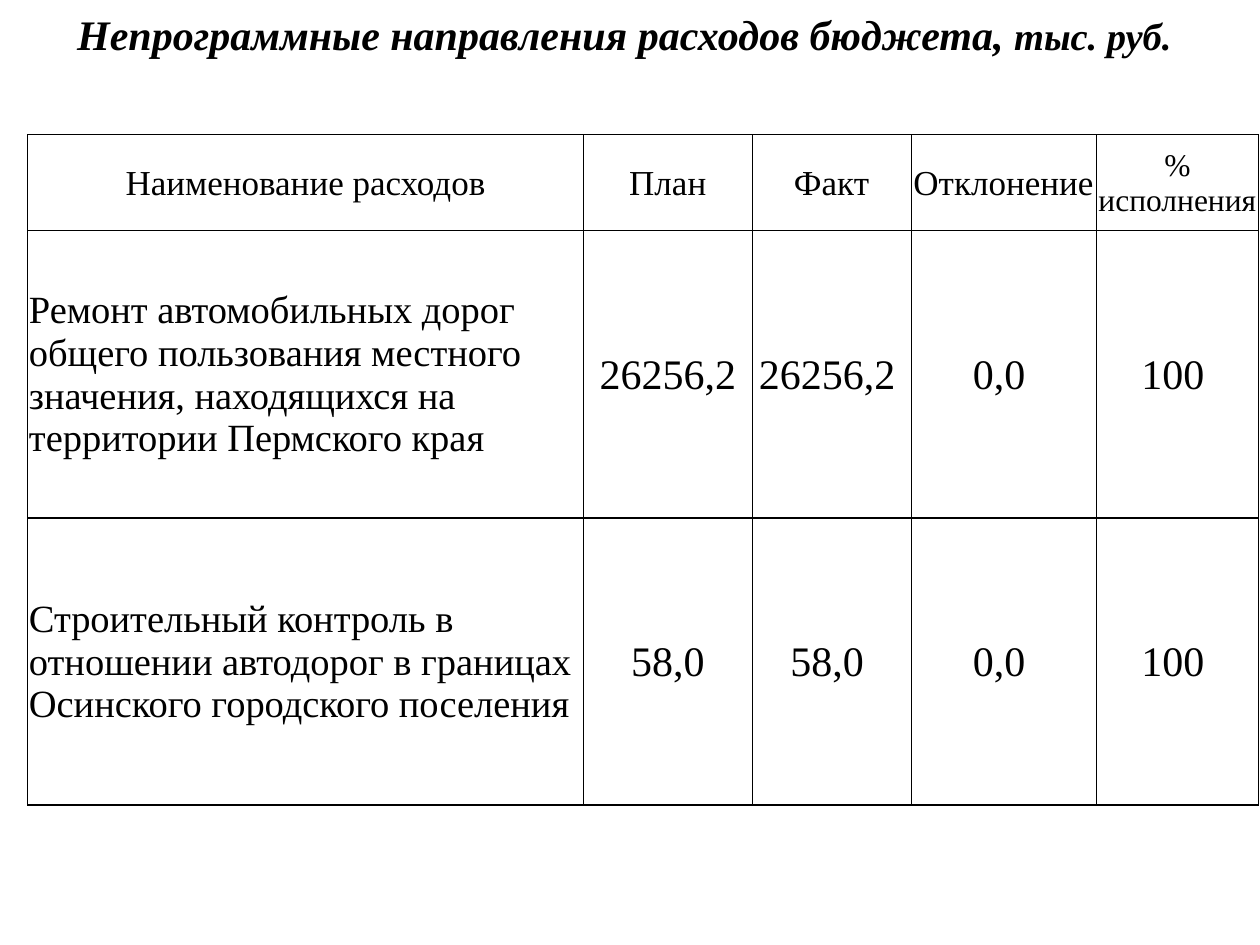
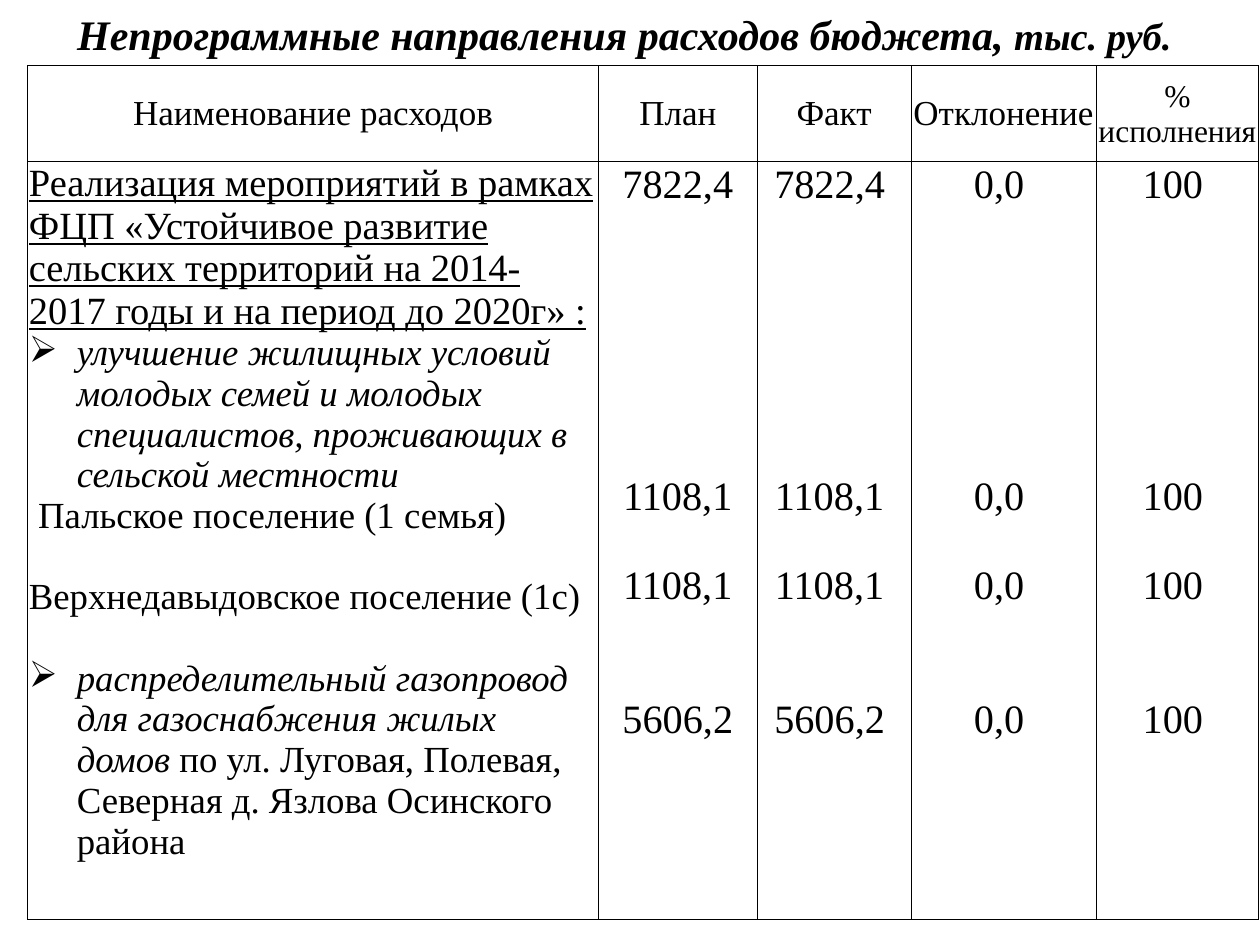
from dataclasses import dataclass

from lxml.etree import SubElement
from pptx import Presentation
from pptx.dml.color import RGBColor
from pptx.enum.text import MSO_ANCHOR, MSO_AUTO_SIZE, PP_ALIGN
from pptx.oxml.ns import qn
from pptx.util import Inches, Pt

# Shared style
COLORS = {"text": "000000", "border": "000000", "background": "FFFFFF"}
FONT = "Times New Roman"
LINE_HEIGHT = 1.107  # line height of the font relative to its size
THIN, THICK = 0.5, 1
HEADINGS = ["Наименование расходов", "План", "Факт", "Отклонение", "% исполнения"]
TABLE_LEFT = 0.22
HEADING_HEIGHT = 0.76


@dataclass
class Line:
    """One paragraph: runs are (text, style letters), gap counts skipped lines."""
    runs: list
    size: float
    centered: bool = True
    gap: int = 0
    bullet: str = ""


def write_lines(frame, lines):
    for index, line in enumerate(lines):
        paragraph = frame.paragraphs[0] if index == 0 else frame.add_paragraph()
        paragraph.alignment = PP_ALIGN.CENTER if line.centered else PP_ALIGN.LEFT
        paragraph.space_before = Pt(round(line.gap * line.size * LINE_HEIGHT, 1))
        if line.bullet:
            add_bullet(paragraph, line.bullet)
        for text, style in line.runs:
            run = paragraph.add_run()
            run.text = text
            font = run.font
            font.name, font.size = FONT, Pt(line.size)
            font.color.rgb = RGBColor.from_string(COLORS["text"])
            font.bold, font.italic = "b" in style, "i" in style
            font.underline = "u" in style


def add_bullet(paragraph, symbol):
    properties = paragraph._p.get_or_add_pPr()
    properties.set("marL", str(Inches(0.38)))
    properties.set("indent", str(-Inches(0.38)))
    SubElement(properties, qn("a:buChar"), char=symbol)


def set_borders(cell, left, right, top, bottom):
    properties = cell._tc.get_or_add_tcPr()
    for side, width in zip("LRTB", (left, right, top, bottom)):
        border = SubElement(properties, qn(f"a:ln{side}"), w=str(Pt(width)))
        fill = SubElement(border, qn("a:solidFill"))
        SubElement(fill, qn("a:srgbClr"), val=COLORS["border"])


def add_title(slide):
    title = slide.shapes.add_textbox(Inches(0.35), Inches(0.02), Inches(9.21), Inches(0.51))
    frame = title.text_frame
    frame.word_wrap = True
    frame.auto_size = MSO_AUTO_SIZE.SHAPE_TO_FIT_TEXT
    write_lines(frame, [Line([("Непрограммные направления расходов бюджета, ", "bi"),
                              ("тыс. руб.", "bi")], 24)])
    frame.paragraphs[0].runs[-1].font.size = Pt(22)


def add_expense_table(slide, top, widths, row_height, expenses, anchor, rule):
    """Each expense is a list with the lines of its five cells."""
    last = len(HEADINGS) - 1
    headings = [[Line([(text, "")], 18 if column == last else 20)]
                for column, text in enumerate(HEADINGS)]
    rows = [headings] + expenses
    heights = [HEADING_HEIGHT] + [row_height] * len(expenses)
    table = slide.shapes.add_table(
        len(rows), len(widths), Inches(TABLE_LEFT), Inches(top),
        Inches(sum(widths)), Inches(sum(heights))).table
    table.first_row = table.horz_banding = False
    for column, width in zip(table.columns, widths):
        column.width = Inches(width)
    for row, height in zip(table.rows, heights):
        row.height = Inches(height)

    for r, contents in enumerate(rows):
        for c, lines in enumerate(contents):
            cell = table.cell(r, c)
            set_borders(cell, THIN, THICK if c == last else THIN,
                        rule if r > 1 else THIN, rule if r else THIN)
            cell.fill.background()
            cell.margin_left = cell.margin_top = Inches(0.01)
            cell.margin_right = Inches(0.08 if r and c > 1 else 0.01)
            cell.margin_bottom = 0
            cell.vertical_anchor = anchor if r else MSO_ANCHOR.MIDDLE
            write_lines(cell.text_frame, lines)


def build_roads_slide(slide):
    expenses = [
        ("Ремонт автомобильных дорог общего пользования местного значения, "
         "находящихся на территории Пермского края", "26256,2"),
        ("Строительный контроль в отношении автодорог в границах "
         "Осинского городского поселения", "58,0"),
    ]
    rows = [[[Line([(name, "")], 22, centered=False)]]
            + [[Line([(value, "")], 24)] for value in (amount, amount, "0,0", "100")]
            for name, amount in expenses]
    add_title(slide)
    add_expense_table(slide, 1.07, [4.41, 1.34, 1.26, 1.47, 1.29], 2.28, rows,
                      MSO_ANCHOR.MIDDLE, THICK)


def build_rural_slide(slide):
    program = [
        Line([("Реализация мероприятий в рамках ФЦП «Устойчивое развитие сельских "
               "территорий на 2014-2017 годы и на период до 2020г» :", "u")],
             22, centered=False),
        Line([("улучшение жилищных условий молодых семей и молодых специалистов, "
               "проживающих в сельской местности", "i")],
             21, centered=False, bullet="➢"),
        Line([(" Пальское поселение (1 семья)", "")], 21, centered=False),
        Line([("Верхнедавыдовское поселение (1с)", "")], 21, centered=False, gap=1),
        Line([("распределительный газопровод для газоснабжения жилых домов ", "i"),
              ("по ул. Луговая, Полевая, Северная д. Язлова Осинского района", "")],
             21, centered=False, gap=1, bullet="➢"),
    ]
    amounts = ["7822,4", "1108,1", "1108,1", "5606,2"]
    gaps = [0, 6, 1, 2]  # lines skipped to stay beside the matching name
    columns = [amounts, amounts, ["0,0"] * 4, ["100"] * 4]
    values = [[Line([(value, "")], 23, gap=gap) for value, gap in zip(column, gaps)]
              for column in columns]
    add_title(slide)
    add_expense_table(slide, 0.52, [4.53, 1.26, 1.22, 1.47, 1.29], 6.02,
                      [[program] + values], MSO_ANCHOR.TOP, THIN)


def main():
    presentation = Presentation()
    presentation.slide_width, presentation.slide_height = Inches(10), Inches(7.5)
    blank = presentation.slide_layouts[6]
    for build in (build_roads_slide, build_rural_slide):
        slide = presentation.slides.add_slide(blank)
        background = slide.background.fill
        background.solid()
        background.fore_color.rgb = RGBColor.from_string(COLORS["background"])
        build(slide)
    presentation.save("out.pptx")


if __name__ == "__main__":
    main()
